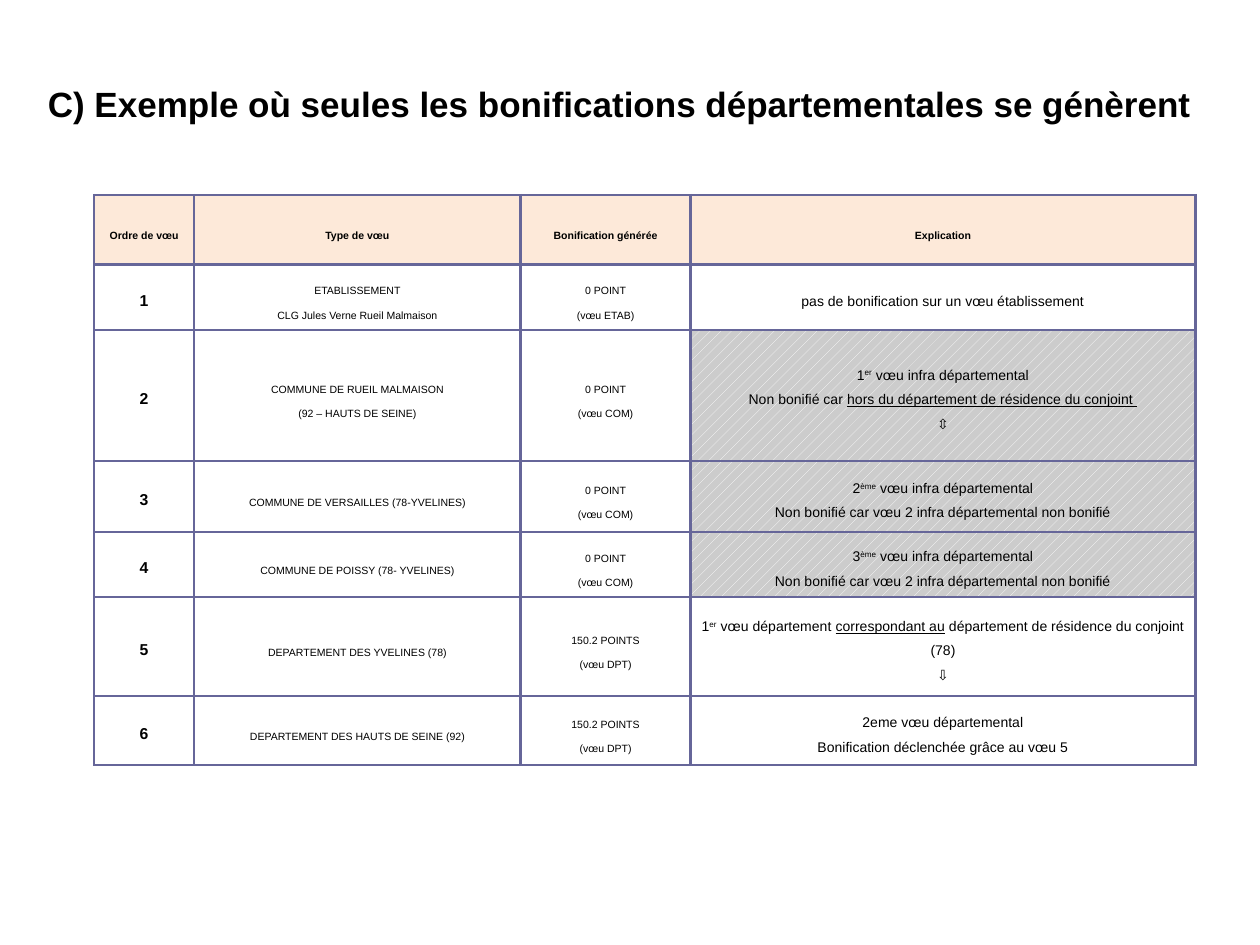
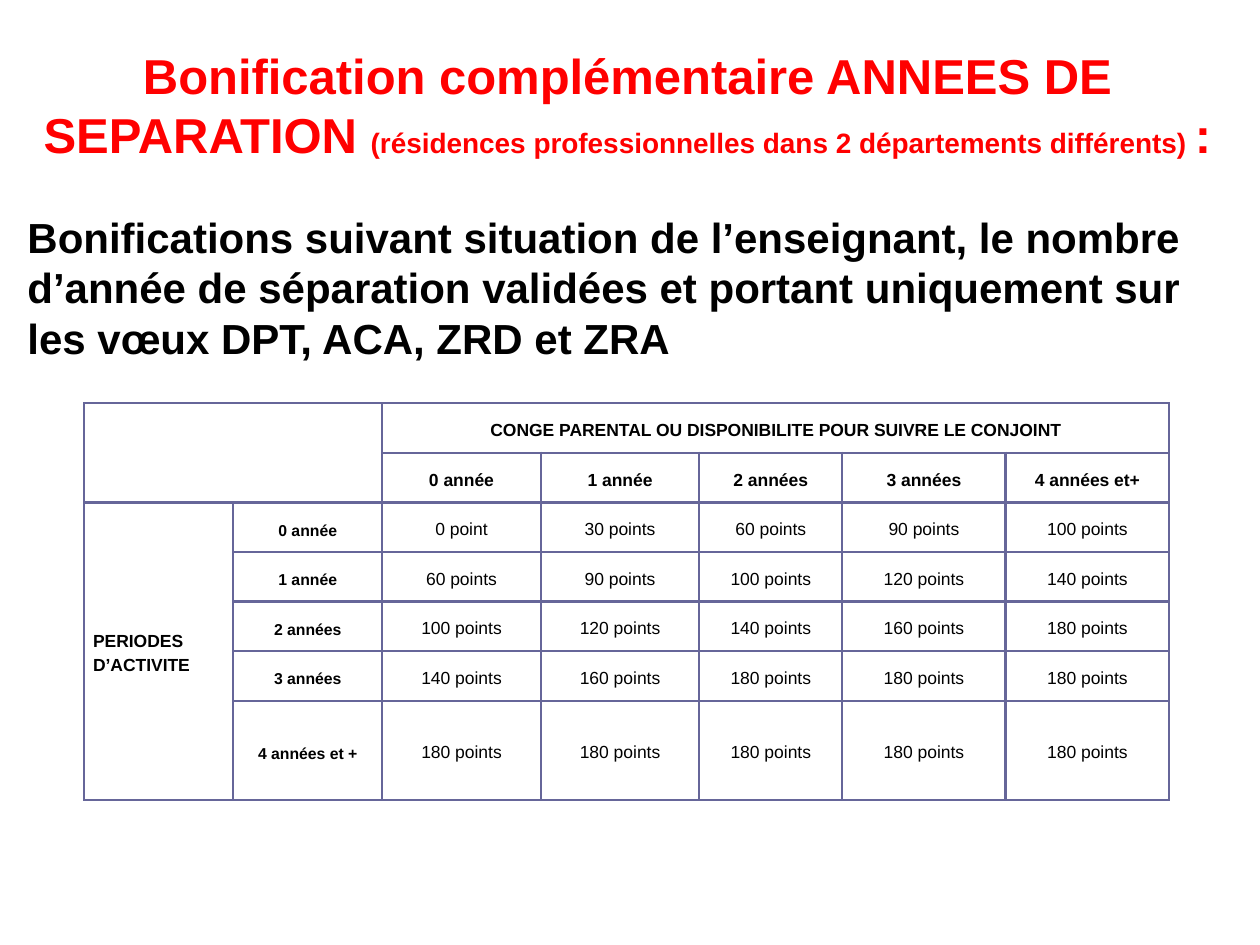
from dataclasses import dataclass

from lxml import etree
from pptx import Presentation
from pptx.dml.color import RGBColor
from pptx.enum.dml import MSO_PATTERN
from pptx.enum.text import MSO_ANCHOR, PP_ALIGN
from pptx.oxml.ns import qn
from pptx.util import Pt

LEFT, CENTER, JUSTIFY = PP_ALIGN.LEFT, PP_ALIGN.CENTER, PP_ALIGN.JUSTIFY
MIDDLE = MSO_ANCHOR.MIDDLE
HATCH = MSO_PATTERN.PERCENT_20


@dataclass(frozen=True)
class Theme:
    font: str = "Arial"
    black: str = "000000"
    white: str = "FFFFFF"
    red: str = "FF0000"
    border: str = "666699"
    header_fill: str = "FDE9D9"
    hatch_back: str = "CCCCCC"
    border_width: float = 1.5
    cell_margin: float = 5
    cell_line: float = 14
    tiny: float = 6
    small: float = 8
    label: float = 9
    body: float = 10
    note: float = 16
    example_title: float = 20
    statement: float = 24
    title: float = 28


THEME = Theme()


@dataclass(frozen=True)
class Span:
    text: str
    size: float
    bold: bool = False
    color: str = THEME.black
    raised: bool = False
    underlined: bool = False


# Shared text and table helpers
def rgb(code):
    return RGBColor.from_string(code)


def add_spans(para, spans, align):
    para.alignment = align
    for item in spans:
        span = para.add_run()
        span.text = item.text
        font = span.font
        font.name, font.size, font.bold = THEME.font, Pt(item.size), item.bold
        font.color.rgb = rgb(item.color)
        if item.underlined:
            font.underline = True
        if item.raised:
            span._r.get_or_add_rPr().set("baseline", "30000")


def add_paragraphs(frame, paragraphs, align):
    """Fill a text frame with lists of spans, one list a paragraph."""
    paras = []
    for index, spans in enumerate(paragraphs):
        para = frame.add_paragraph() if index else frame.paragraphs[0]
        add_spans(para, spans, align)
        paras.append(para)
    return paras


def add_text(page, box, paragraphs, align):
    shape = page.shapes.add_textbox(*(Pt(value) for value in box))
    frame = shape.text_frame
    frame.word_wrap = True
    frame.vertical_anchor = MIDDLE
    return add_paragraphs(frame, paragraphs, align)


def draw_borders(cell):
    properties = cell._tc.get_or_add_tcPr()
    for side in ("a:lnL", "a:lnR", "a:lnT", "a:lnB"):
        line = etree.SubElement(properties, qn(side), w=str(Pt(THEME.border_width)))
        fill = etree.SubElement(line, qn("a:solidFill"))
        etree.SubElement(fill, qn("a:srgbClr"), val=THEME.border)


def fill_cell(cell, paragraphs, align=CENTER):
    for para in add_paragraphs(cell.text_frame, paragraphs, align):
        para.line_spacing = Pt(THEME.cell_line)


def add_grid(page, left, top, widths, heights):
    """Add a bordered, unfilled table with the given column and row sizes."""
    table = page.shapes.add_table(
        len(heights), len(widths), Pt(left), Pt(top), Pt(sum(widths)), Pt(sum(heights))
    ).table
    table.first_row = table.horz_banding = False
    for column, width in zip(table.columns, widths):
        column.width = Pt(width)
    for row, height in zip(table.rows, heights):
        row.height = Pt(height)
    for cell in table.iter_cells():
        draw_borders(cell)
        cell.fill.background()
        cell.vertical_anchor = MIDDLE
        cell.margin_left = cell.margin_right = Pt(THEME.cell_margin)
        cell.margin_top = cell.margin_bottom = 0
    return table


# Slide 1: wishes and the bonus each one brings
def explain(text, **style):
    return Span(text, THEME.small, **style)


def ranked(number, suffix, *rest):
    return [explain(number), explain(suffix, raised=True), *rest]


BELOW_DEPARTMENT = explain(" vœu infra départemental")
NOT_GRANTED = [explain("Non bonifié car vœu 2 infra départemental non bonifié")]

WISH_HEADINGS = ["Ordre de vœu", "Type de vœu", "Bonification générée", "Explication"]
# Type lines, bonus lines, explanation paragraphs, hatched or not
WISHES = [
    (
        ["ETABLISSEMENT", "CLG Jules Verne Rueil Malmaison"],
        ["0 POINT", "(vœu ETAB)"],
        [[explain("pas de bonification sur un vœu établissement")]],
        False,
    ),
    (
        ["COMMUNE DE RUEIL MALMAISON", "(92 – HAUTS DE SEINE)"],
        ["0 POINT", "(vœu COM)"],
        [
            ranked("1", "er", BELOW_DEPARTMENT),
            [
                explain("Non bonifié car "),
                explain("hors du département de résidence du conjoint ", underlined=True),
            ],
            [explain("⇳")],
        ],
        True,
    ),
    (
        ["COMMUNE DE VERSAILLES (78-YVELINES)"],
        ["0 POINT", "(vœu COM)"],
        [ranked("2", "ème", BELOW_DEPARTMENT), NOT_GRANTED],
        True,
    ),
    (
        ["COMMUNE DE POISSY (78- YVELINES)"],
        ["0 POINT", "(vœu COM)"],
        [ranked("3", "ème", BELOW_DEPARTMENT), NOT_GRANTED],
        True,
    ),
    (
        ["DEPARTEMENT DES YVELINES (78)"],
        ["150.2 POINTS", "(vœu DPT)"],
        [
            ranked(
                "1", "er",
                explain(" vœu département "),
                explain("correspondant au", underlined=True),
                explain(" département de résidence du conjoint (78)"),
            ),
            [explain("⇩")],
        ],
        False,
    ),
    (
        ["DEPARTEMENT DES HAUTS DE SEINE (92)"],
        ["150.2 POINTS", "(vœu DPT)"],
        [
            [explain("2eme vœu départemental")],
            [explain("Bonification déclenchée grâce au vœu 5")],
        ],
        False,
    ),
]


def add_wish_table(page, left, top):
    widths = [57.1, 186.6, 97.1, 288.6]
    heights = [39.7, 37.4, 74.9, 40.6, 37.4, 56.3, 39.7]
    table = add_grid(page, left, top, widths, heights)
    for column, heading in enumerate(WISH_HEADINGS):
        cell = table.cell(0, column)
        cell.fill.solid()
        cell.fill.fore_color.rgb = rgb(THEME.header_fill)
        fill_cell(cell, [[Span(heading, THEME.tiny, bold=True)]])
    for row, (kind, bonus, explanation, hatched) in enumerate(WISHES, start=1):
        fill_cell(table.cell(row, 0), [[Span(str(row), THEME.label, bold=True)]])
        for column, lines in enumerate((kind, bonus), start=1):
            fill_cell(table.cell(row, column), [[Span(line, THEME.tiny)] for line in lines])
        cell = table.cell(row, 3)
        fill_cell(cell, explanation)
        if hatched:
            cell.fill.patterned()
            cell.fill.pattern = HATCH
            cell.fill.fore_color.rgb = rgb(THEME.white)
            cell.fill.back_color.rgb = rgb(THEME.hatch_back)


def build_example_slide(page):
    title = "C) Exemple où seules les bonifications départementales se génèrent"
    add_text(page, (20.2, 43.2, 678.2, 31.7),
             [[Span(title, THEME.example_title, bold=True)]], LEFT)
    add_wish_table(page, 53.8, 111.4)


# Slide 2: points by years of activity and years of leave
LEAVE_HEADING = "CONGE PARENTAL OU DISPONIBILITE POUR SUIVRE LE CONJOINT"
LEAVE_YEARS = ["0 année", "1 année", "2 années", "3 années", "4 années et+"]
ACTIVITY_POINTS = {
    "0 année": [0, 30, 60, 90, 100],
    "1 année": [60, 90, 100, 120, 140],
    "2 années": [100, 120, 140, 160, 180],
    "3 années": [140, 160, 180, 180, 180],
    "4 années et +": [180] * 5,
}


def add_points_table(page, left, top):
    row_height = 28.35
    widths = [85.1, 85.1, 90.6, 90.6, 81.7, 93.4, 93.4]
    table = add_grid(page, left, top, widths, [row_height] * 6 + [2 * row_height])
    # Merged corner, column heading and row heading
    table.cell(0, 0).merge(table.cell(1, 1))
    table.cell(0, 2).merge(table.cell(0, 6))
    table.cell(2, 0).merge(table.cell(6, 0))
    fill_cell(table.cell(0, 2), [[Span(LEAVE_HEADING, THEME.body, bold=True)]])
    fill_cell(table.cell(2, 0), [[Span("PERIODES D’ACTIVITE", THEME.body, bold=True)]], JUSTIFY)
    for column, years in enumerate(LEAVE_YEARS, start=2):
        fill_cell(table.cell(1, column), [[Span(years, THEME.body, bold=True)]])
    # Points
    for row, (years, points) in enumerate(ACTIVITY_POINTS.items(), start=2):
        fill_cell(table.cell(row, 1), [[Span(years, THEME.label, bold=True)]])
        for column, value in enumerate(points, start=2):
            unit = "points" if value else "point"
            fill_cell(table.cell(row, column), [[Span(f"{value} {unit}", THEME.body)]])


def build_separation_slide(page):
    def heading(text, size):
        return Span(text, size, bold=True, color=THEME.red)

    title = [
        heading("Bonification complémentaire ANNEES DE SEPARATION ", THEME.title),
        heading("(résidences professionnelles dans 2 départements différents) ", THEME.note),
        heading(":", THEME.title),
    ]
    statement = Span(
        "Bonifications suivant situation de l’enseignant, le nombre d’année de séparation "
        "validées et portant uniquement sur les vœux DPT, ACA, ZRD et ZRA",
        THEME.statement, bold=True,
    )
    title_para, statement_para = add_text(
        page, (8.6, 20.9, 699.8, 191.5), [title, [statement]], LEFT
    )
    title_para.alignment = CENTER
    statement_para.space_before = Pt(27.6)
    add_points_table(page, 48.2, 230.4)


def main():
    deck = Presentation()
    deck.slide_width, deck.slide_height = Pt(720), Pt(540)
    blank = deck.slide_layouts[6]
    for build in (build_example_slide, build_separation_slide):
        build(deck.slides.add_slide(blank))
    deck.save("out.pptx")


if __name__ == "__main__":
    main()
